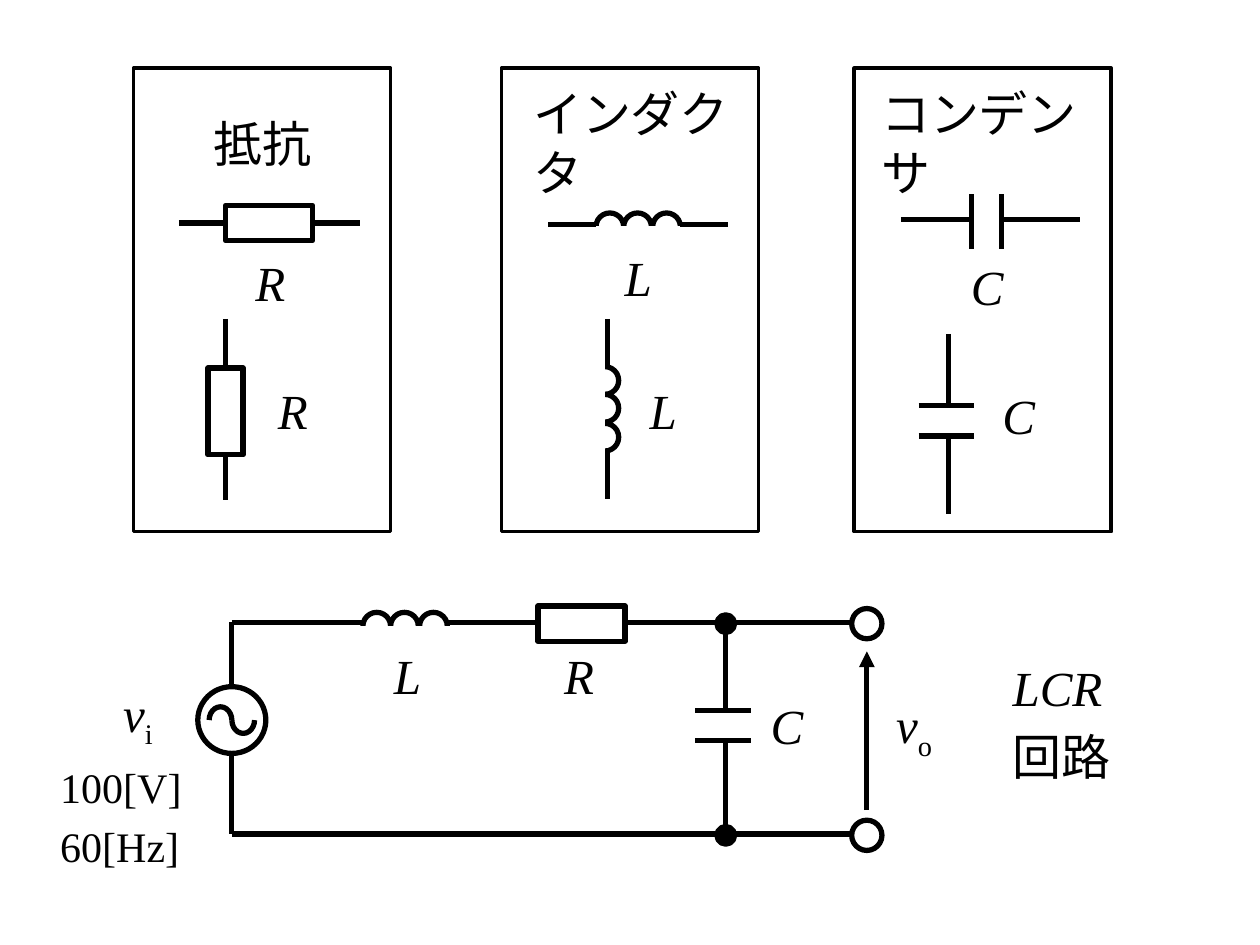
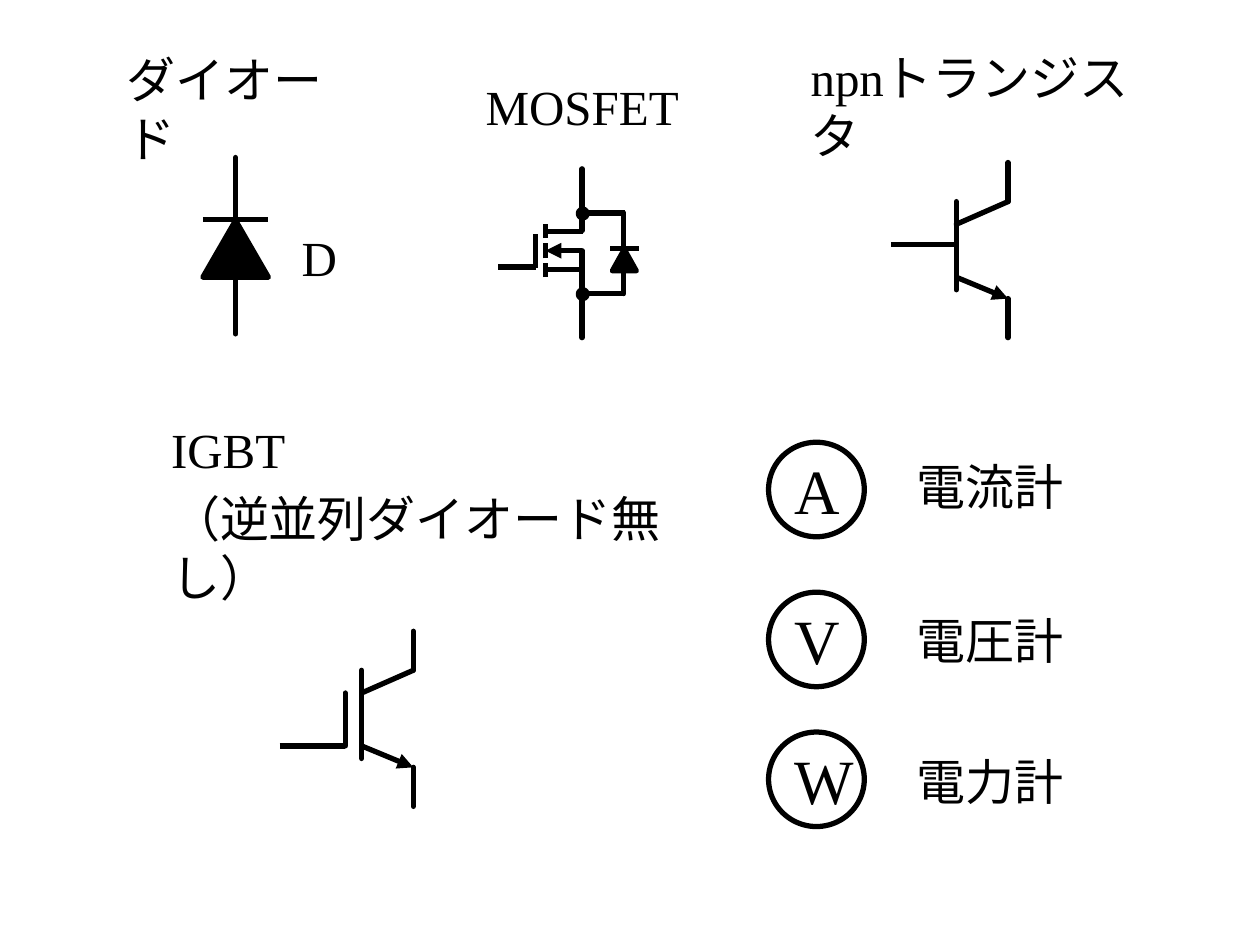
"""Build two slides of electrical circuit symbols."""
from lxml import etree
from pptx import Presentation, util as u
from pptx.dml.color import RGBColor
from pptx.enum import lang, shapes, text
from pptx.oxml import ns

PX = 9144
FONT = "Times New Roman"
COLORS = {"ink": "000000", "paper": "FFFFFF"}
KINDS = shapes.MSO_SHAPE
RECT, OVAL, TRIANGLE, ARC = KINDS.RECTANGLE, KINDS.OVAL, KINDS.ISOSCELES_TRIANGLE, KINDS.ARC


def coil(left, top, upright=False):
    """List three loops and the mask that hides half of each."""
    steps = [0, 22, 45]
    if upright:
        loops = [(OVAL, left, top + step, 22, 22, "paper", "ink", 3) for step in steps]
        return loops + [(RECT, left - 9, top - 6, 19, 79, "paper", "paper", 2)]
    loops = [(OVAL, left + step, top, 22, 22, "paper", "ink", 3) for step in steps]
    return loops + [(RECT, left - 6, top + 12, 79, 19, "paper", "paper", 2)]


def transistor(x, y):
    """List the wires of a bar with collector and emitter."""
    return [
        (x, y, x, y + 70, "round"),
        (x, y + 60, x + 41, y + 77, "arrow"),
        (x + 41, y + 77, x + 41, y + 108, "round"),
        (x, y + 18, x + 41, y, "round"),
        (x + 41, y - 31, x + 41, y, "round"),
    ]


passive_shapes = [(RECT, left, 54, 204, 368, None, "ink", 2) for left in (106, 398, 678)]
passive_shapes += coil(473, 169) + coil(469, 291, True) + coil(288, 486)
passive_shapes += [
    (RECT, 179, 163, 69, 28, None, "ink", 3),
    (RECT, 165, 292, 28, 69, None, "ink", 3),
    (RECT, 427, 481, 69, 28, None, "ink", 3),
    (OVAL, 157, 545, 54, 53, "paper", "ink", 3),
    (ARC, 166, 561, 18, 21, None, "ink", 3),
    (ARC, 184, 561, 18, 21, None, "ink", 3, 180),
]
passive_wires = [
    (142, 177, 179, 177), (248, 177, 286, 177),
    (179, 253, 179, 291), (179, 360, 179, 397),
    (435, 178, 473, 178), (540, 178, 578, 178),
    (482, 253, 482, 291), (482, 358, 482, 396),
    (715, 174, 771, 174), (795, 174, 857, 174),
    (771, 154, 771, 198), (795, 154, 795, 198),
    (753, 265, 753, 322), (753, 346, 753, 408),
    (184, 494, 288, 494), (355, 494, 427, 494), (496, 494, 569, 494),
    (184, 494, 184, 545), (184, 598, 184, 662), (184, 662, 569, 662),
    (576, 501, 576, 564), (576, 588, 576, 656),
    (688, 643, 688, 517, "arrow"),
]
for x, y in ((753, 322), (576, 564)):
    passive_wires += [(x - 24, y + gap, x + 20, y + gap) for gap in (0, 24)]
for y in (494, 662):
    passive_shapes += [(OVAL, 569, y - 6, 14, 14, "ink", "ink", 3),
                       (OVAL, 676, y - 11, 24, 24, "paper", "ink", 3)]
    passive_wires.append((583, y, 676, y))

passive_labels = [
    (112, 84, 192, 58, 28, [[("抵抗", "")]]),
    (404, 84, 192, 58, 28, [[("インダクタ", "")]]),
    (678, 84, 198, 58, 28, [[("コンデンサ", "")]]),
    (16, 597, 160, 101, 24, [[("100[V]", "")], [("60[Hz]", "")]]),
    (770, 513, 145, 119, 28, [[("LCR", "italic")], [("回路", "")]]),
    (685, 549, 81, 58, 28, [[("v", "italic"), ("o", "sub")]]),
    (69, 540, 81, 58, 28, [[("v", "italic"), ("i", "sub")]]),
]
for letter, places in {
    "R": [(174, 195), (192, 296), (419, 507)],
    "L": [(466, 191), (486, 296), (283, 507)],
    "C": [(743, 198), (768, 300), (584, 546)],
}.items():
    passive_labels += [(x, y, 81, 58, 28, [[(letter, "italic")]]) for x, y in places]

device_shapes = [
    (TRIANGLE, 161, 175, 52, 45, "ink", "ink", 3),
    (TRIANGLE, 486, 198, 19, 17, "ink", "ink", 3),
    (OVAL, 459, 166, 7, 7, "ink", "ink", 3),
    (OVAL, 459, 230, 7, 7, "ink", "ink", 3),
]
device_wires = [
    (187, 125, 187, 265, "round"), (161, 174, 213, 174),
    (425, 212, 395, 212), (425, 213, 425, 186),
    (433, 220, 433, 209), (433, 205, 433, 193), (433, 189, 433, 178),
    (462, 199, 433, 199, "arrow"), (463, 214, 433, 214), (463, 184, 433, 184),
    (462, 134, 462, 166, "round"), (462, 183, 462, 173, "round"),
    (462, 230, 462, 199, "round"), (462, 237, 462, 268, "round"),
    (496, 169, 466, 169), (496, 233, 466, 233),
    (495, 233, 495, 169, "round"), (507, 197, 484, 197),
    (707, 194, 759, 194),
    (222, 592, 274, 592), (274, 550, 274, 592, "round"),
]
device_wires += transistor(759, 160) + transistor(287, 532)
device_labels = [
    (213, 175, 81, 58, 28, [[("D", "")]]),
    (82, 57, 192, 58, 28, [[("ダイオード", "")]]),
    (366, 55, 192, 58, 28, [[("MOSFET", "")]]),
    (630, 55, 279, 58, 28, [[("npnトランジスタ", "")]]),
    (102, 344, 456, 126, 28, [[("IGBT", "")], [("（逆並列ダイオード無し）", "")]]),
]
meters = [("A", "電流計", 351, 355), ("V", "電圧計", 470, 477), ("W", "電力計", 581, 589)]
for letter, name, circle_top, name_top in meters:
    device_shapes.append((OVAL, 610, circle_top, 76, 75, "paper", "ink", 3, 0, letter))
    device_labels.append((686, name_top, 200, 61, 28, [[(name, "")]]))

deck = Presentation()
deck.slide_width, deck.slide_height = 1000 * PX, 750 * PX

for page_shapes, page_wires, page_labels in (
    (passive_shapes, passive_wires, passive_labels),
    (device_shapes, device_wires, device_labels),
):
    page = deck.slides.add_slide(deck.slide_layouts[6])

    for kind, x, y, w, h, fill, line, weight, *extra in page_shapes:
        symbol = page.shapes.add_shape(kind, x * PX, y * PX, w * PX, h * PX)
        symbol.shadow.inherit = False
        if fill:
            symbol.fill.solid()
            symbol.fill.fore_color.rgb = RGBColor.from_string(COLORS[fill])
        else:
            symbol.fill.background()
        symbol.line.color.rgb = RGBColor.from_string(COLORS[line])
        symbol.line.width = u.Pt(weight)
        if kind == ARC:
            symbol.adjustments[0], symbol.adjustments[1] = 108, 0
        if extra:
            symbol.rotation = extra[0]
        if extra[1:]:
            para = symbol.text_frame.paragraphs[0]
            para.alignment = text.PP_ALIGN.CENTER
            span = para.add_run()
            span.text = extra[1]
            span.font.name, span.font.size = FONT, u.Pt(36)
            span.font.color.rgb = RGBColor.from_string(COLORS["ink"])

    for x1, y1, x2, y2, *end in page_wires:
        wire = page.shapes.add_connector(
            shapes.MSO_CONNECTOR.STRAIGHT, x1 * PX, y1 * PX, x2 * PX, y2 * PX)
        wire.line.color.rgb = RGBColor.from_string(COLORS["ink"])
        wire.line.width = u.Pt(3)
        outline = wire.line._get_or_add_ln()
        if "round" in end:
            outline.set("cap", "rnd")
        if "arrow" in end:
            etree.SubElement(outline, ns.qn("a:tailEnd"), type="triangle")
        etree.SubElement(wire._element.spPr, ns.qn("a:effectLst"))

    for x, y, w, h, size, lines in page_labels:
        box = page.shapes.add_textbox(x * PX, y * PX, w * PX, h * PX)
        frame = box.text_frame
        frame.word_wrap = True
        frame.vertical_anchor = text.MSO_ANCHOR.MIDDLE
        frame._txBody.bodyPr.set("anchorCtr", "1")
        for number, spans in enumerate(lines):
            para = frame.add_paragraph() if number else frame.paragraphs[0]
            space = etree.SubElement(para._p.get_or_add_pPr(), ns.qn("a:spcBef"))
            etree.SubElement(space, ns.qn("a:spcPct"), val="20000")
            for words, style in spans:
                span = para.add_run()
                span.text = words
                span.font.name, span.font.size = FONT, u.Pt(size)
                span.font.italic = style == "italic"
                span.font.language_id = lang.MSO_LANGUAGE_ID.JAPANESE
                span.font.color.rgb = RGBColor.from_string(COLORS["ink"])
                if style == "sub":
                    span._r.get_or_add_rPr().set("baseline", "-25000")

deck.save("out.pptx")
